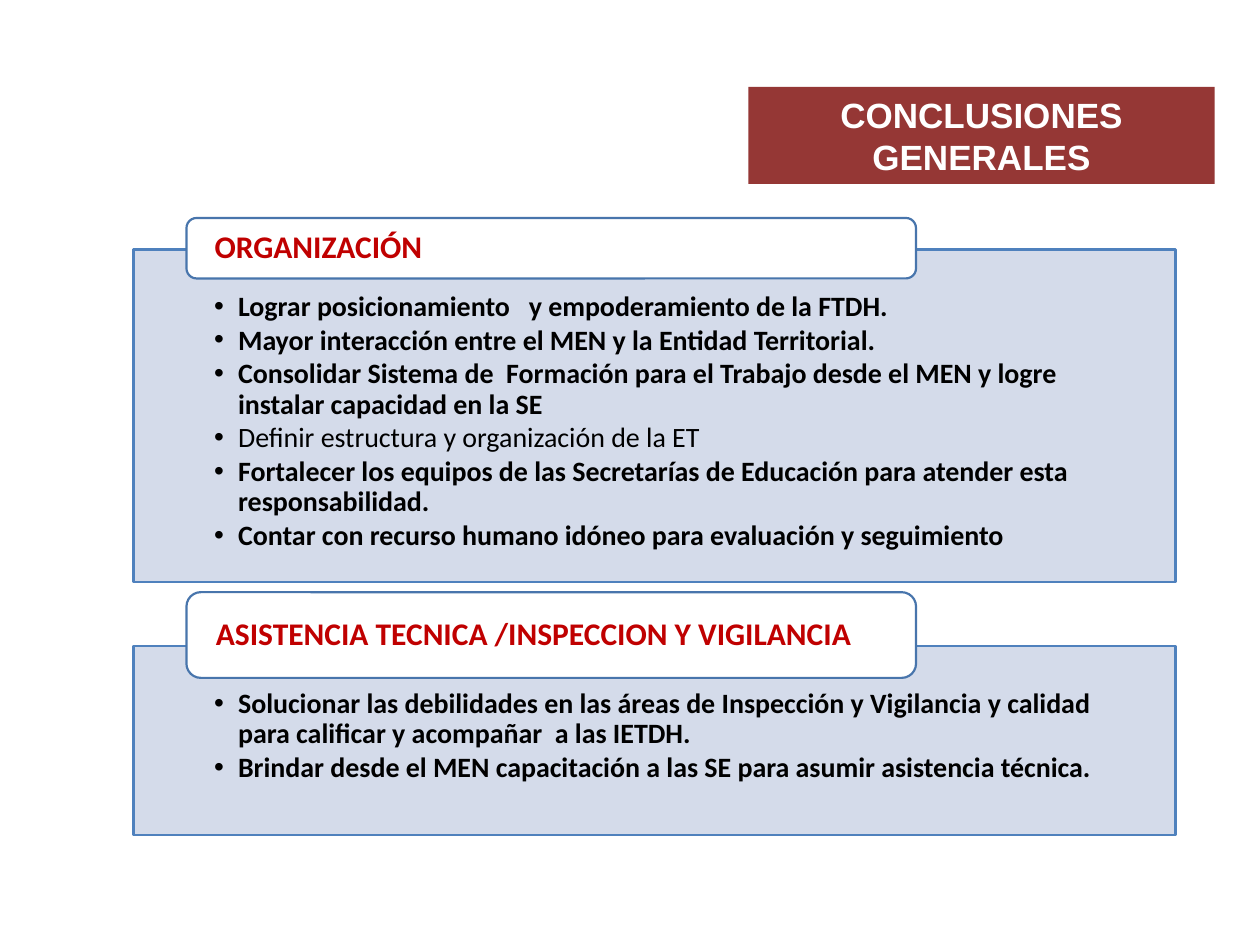
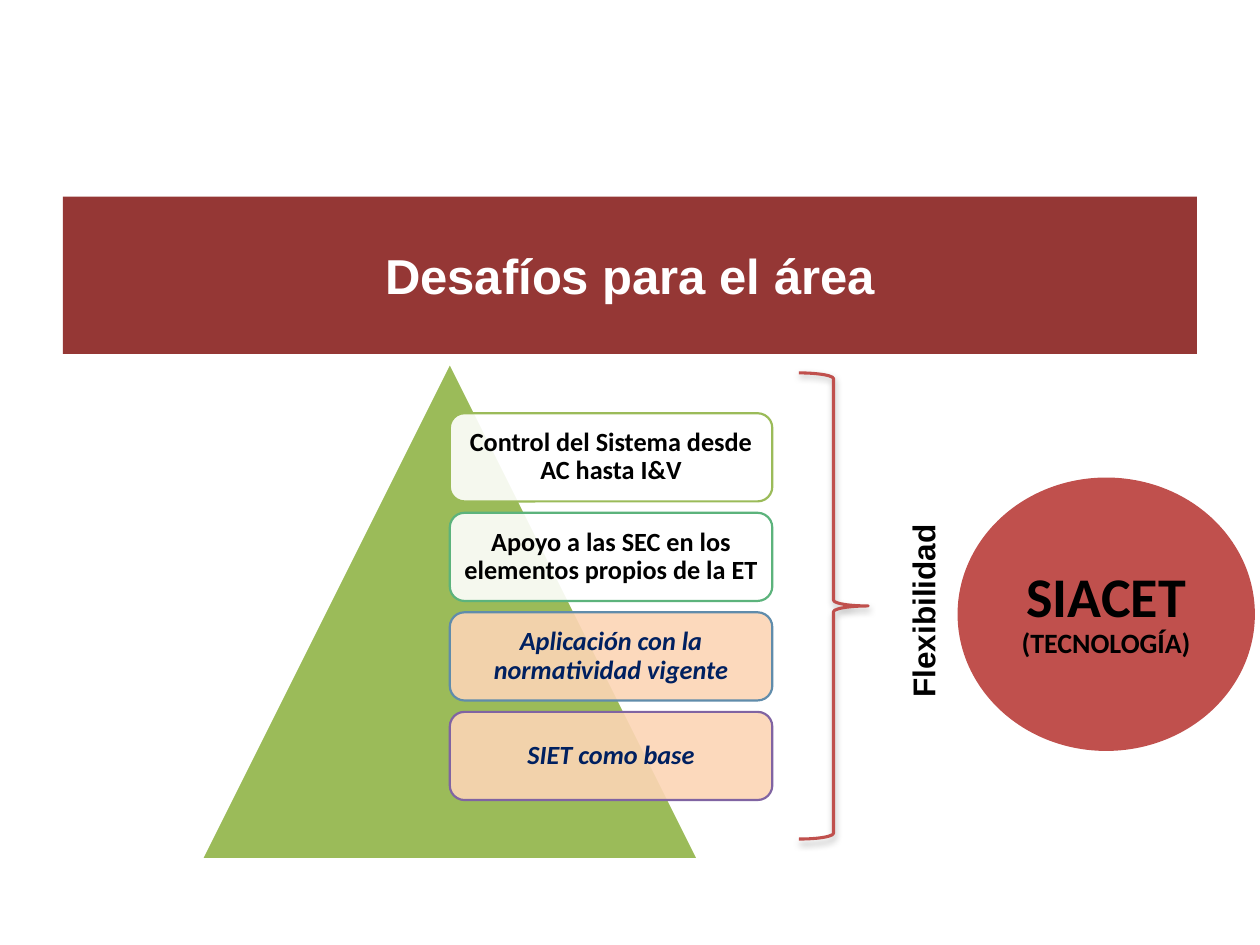
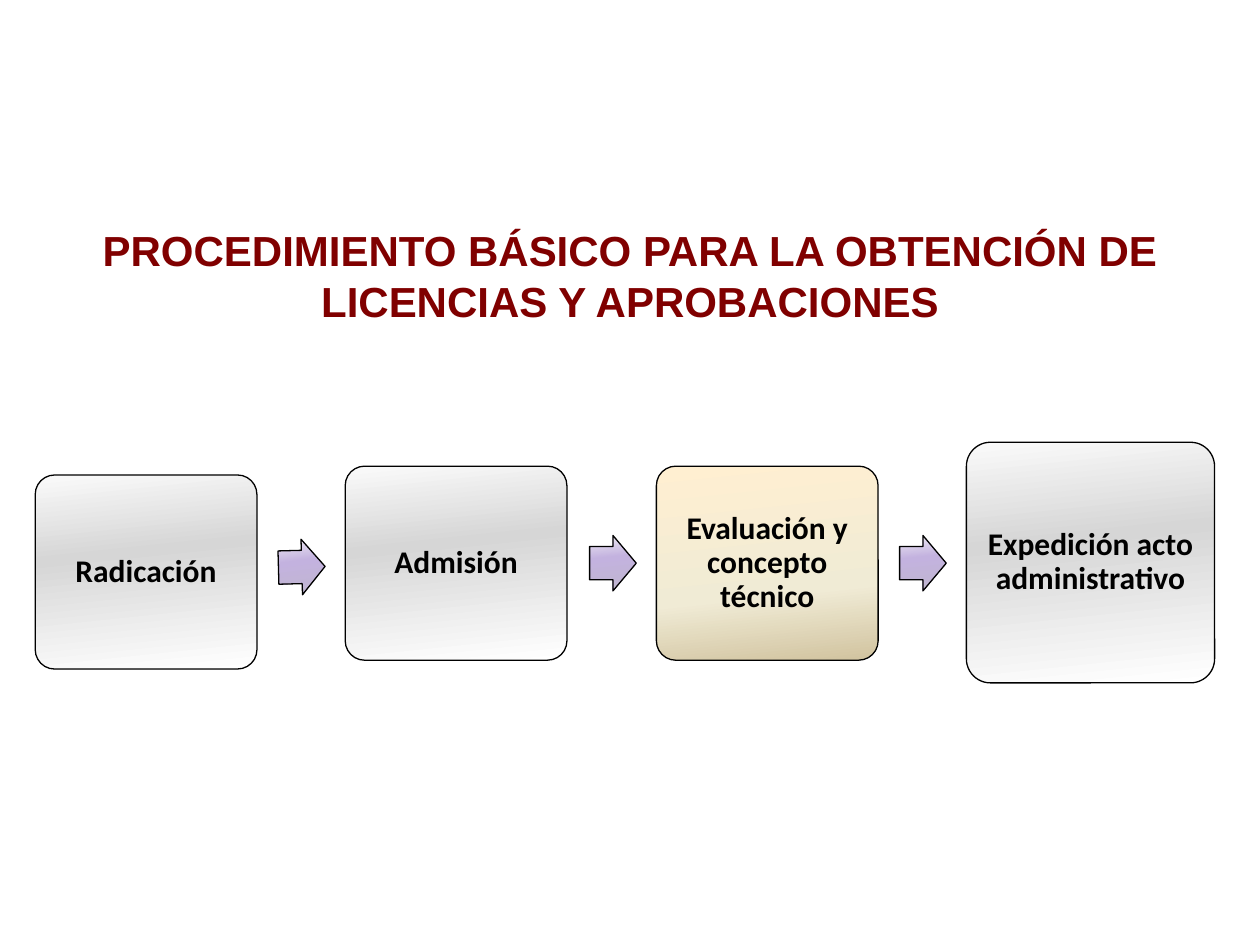
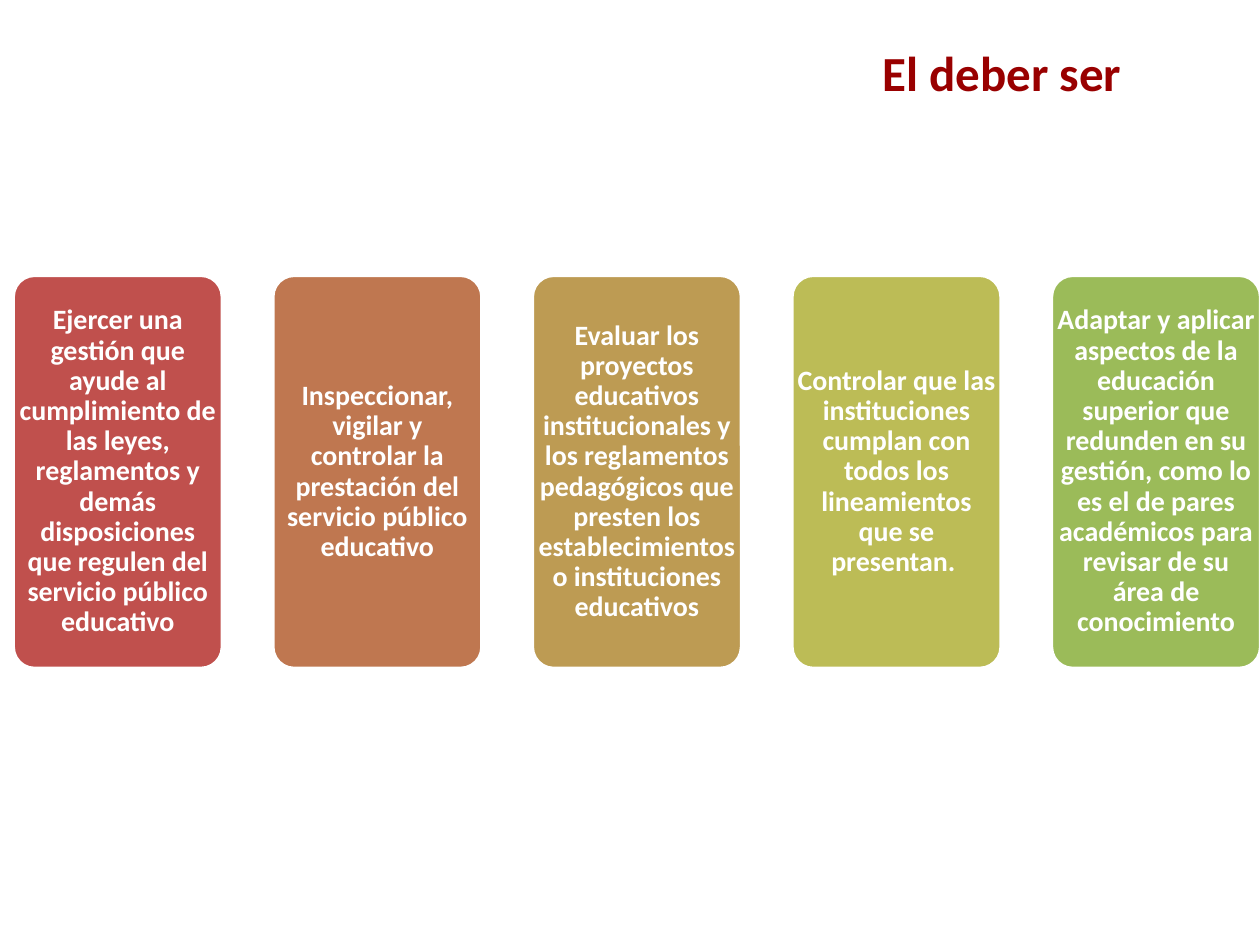
import copy

import lxml.etree
import pptx
import pptx.dml.color
import pptx.enum.shapes
import pptx.enum.text
import pptx.oxml.ns
import pptx.util

Inches = pptx.util.Inches
Pt = pptx.util.Pt
RGBColor = pptx.dml.color.RGBColor
Shape = pptx.enum.shapes.MSO_SHAPE
Align = pptx.enum.text.PP_ALIGN
Anchor = pptx.enum.text.MSO_ANCHOR
qn = pptx.oxml.ns.qn

BLACK = RGBColor(0x00, 0x00, 0x00)
WHITE = RGBColor(0xFF, 0xFF, 0xFF)
MAROON = RGBColor(0x95, 0x37, 0x35)
DARK_RED = RGBColor(0x80, 0x00, 0x00)
DEEP_RED = RGBColor(0x99, 0x00, 0x00)
HEADING_RED = RGBColor(0xC0, 0x00, 0x00)
RED = RGBColor(0xC0, 0x50, 0x4D)
BLUE = RGBColor(0x4F, 0x81, 0xBD)
TAB_BLUE = RGBColor(0x48, 0x75, 0xAC)
PALE_BLUE = RGBColor(0xD0, 0xD8, 0xE8)
NAVY = RGBColor(0x00, 0x20, 0x60)
GREEN = RGBColor(0x9B, 0xBB, 0x59)
SEA_GREEN = RGBColor(0x5C, 0xB3, 0x7C)
STEEL = RGBColor(0x60, 0x8C, 0xAB)
PURPLE = RGBColor(0x80, 0x64, 0xA2)
PEACH = RGBColor(0xFC, 0xD5, 0xB5)
COPPER = RGBColor(0xBF, 0x77, 0x50)
OCHRE = RGBColor(0xBD, 0x9B, 0x53)
OLIVE = RGBColor(0xBC, 0xBC, 0x56)
SILVER_STOPS = [(0, RGBColor(0xFA, 0xFA, 0xFA)), (0.4, RGBColor(0xD6, 0xD6, 0xD6)), (1, WHITE)]
CREAM_STOPS = [(0, RGBColor(0xFF, 0xEF, 0xD1)), (0.65, RGBColor(0xF0, 0xEB, 0xD5)),
               (1, RGBColor(0xD1, 0xC3, 0x9F))]
LILAC_STOPS = [(0, RGBColor(0xEF, 0xEB, 0xF4)), (0.4, RGBColor(0xC3, 0xB2, 0xDF)),
               (1, RGBColor(0xC0, 0xB6, 0xCF))]
TITLE_PLACE = (0.5, 1.56, 9, 1.25)


def add_shape(page, kind, place, fill=None, line=None, width=1.25, opacity=100):
    shape = page.shapes.add_shape(kind, *map(Inches, place))
    shape.shadow.inherit = False
    if fill is None:
        shape.fill.background()
    elif isinstance(fill, list):
        shape.fill.gradient()
        shape.fill.gradient_angle = 276
        stop_list = shape._element.spPr.find(".//" + qn("a:gsLst"))
        stop_list.append(copy.deepcopy(stop_list[-1]))
        for stop, (position, color) in zip(shape.fill.gradient_stops, fill):
            stop.position = position
            stop.color.rgb = color
    else:
        shape.fill.solid()
        shape.fill.fore_color.rgb = fill
    if opacity < 100:
        color_node = shape._element.spPr.find(".//" + qn("a:srgbClr"))
        lxml.etree.SubElement(color_node, qn("a:alpha"), val=str(opacity * 1000))
    if line is None:
        shape.line.fill.background()
    else:
        shape.line.color.rgb = line
        shape.line.width = Pt(width)
    return shape


def write(box, lines, size, color, font="Calibri", align=Align.CENTER, anchor=Anchor.MIDDLE,
          insets=(0.1, 0.05, 0.1, 0.05), spacing=0.9, bullets=False):
    frame = box.text_frame
    frame.word_wrap = True
    frame.vertical_anchor = anchor
    frame.margin_left, frame.margin_top, frame.margin_right, frame.margin_bottom = map(Inches, insets)
    for index, line in enumerate(lines):
        para = frame.paragraphs[0] if index == 0 else frame.add_paragraph()
        para.add_run().text = line
        para.alignment = align
        para.line_spacing = spacing
        if bullets:
            para.space_after = Pt(2)
            properties = para._p.get_or_add_pPr()
            properties.set("marL", str(Inches(0.19)))
            properties.set("indent", str(Inches(-0.19)))
            lxml.etree.SubElement(properties, qn("a:buFont"), typeface="Arial")
            lxml.etree.SubElement(properties, qn("a:buChar"), char="•")
        para.font.name = font
        para.font.size = Pt(size)
        para.font.bold = True
        para.font.color.rgb = color
    return frame.paragraphs


deck = pptx.Presentation()
deck.slide_width = Inches(10)
deck.slide_height = Inches(7.5)
blank = deck.slide_layouts[6]

page = deck.slides.add_slide(blank)
sections = [
    ("ORGANIZACIÓN", 1.73, 0.48, 1.98, 2.64, [
        "Lograr posicionamiento   y empoderamiento de la FTDH.",
        "Mayor interacción entre el MEN y la Entidad Territorial.",
        "Consolidar Sistema de  Formación para el Trabajo desde el MEN y logre instalar capacidad en la SE",
        "Definir estructura y organización de la ET",
        "Fortalecer los equipos de las Secretarías de Educación para atender esta responsabilidad.",
        "Contar con recurso humano idóneo para evaluación y seguimiento",
    ]),
    ("ASISTENCIA TECNICA /INSPECCION Y VIGILANCIA", 4.7, 0.68, 5.13, 1.5, [
        "Solucionar las debilidades en las áreas de Inspección y Vigilancia y calidad para calificar "
        "y acompañar  a las IETDH.",
        "Brindar desde el MEN capacitación a las SE para asumir asistencia técnica.",
    ]),
]
for heading, tab_top, tab_height, panel_top, panel_height, points in sections:
    panel = add_shape(page, Shape.RECTANGLE, (1.06, panel_top, 8.27, panel_height),
                      PALE_BLUE, BLUE, opacity=90)
    for para in write(panel, points, 16, BLACK, align=Align.LEFT, anchor=Anchor.TOP,
                      insets=(0.64, 0.34, 0.64, 0.12), bullets=True):
        para.font.bold = not para.text.startswith("Definir")
    tab = add_shape(page, Shape.ROUNDED_RECTANGLE, (1.48, tab_top, 5.79, tab_height), WHITE, TAB_BLUE)
    write(tab, [heading], 18, HEADING_RED, align=Align.LEFT, insets=(0.2, 0, 0.2, 0))
banner = add_shape(page, Shape.RECTANGLE, (5.94, 0.69, 3.7, 0.77), MAROON)
write(banner, ["CONCLUSIONES", "GENERALES"], 20, WHITE, "Arial", anchor=Anchor.TOP, spacing=1)

page = deck.slides.add_slide(blank)
add_shape(page, Shape.ISOSCELES_TRIANGLE, (1.6, 2.88, 3.94, 3.94), GREEN, WHITE)
challenges = [
    ("Control del Sistema desde AC hasta I&V", WHITE, GREEN, BLACK),
    ("Apoyo a las SEC en los elementos propios de la ET", WHITE, SEA_GREEN, BLACK),
    ("Aplicación con la normatividad vigente", PEACH, STEEL, NAVY),
    ("SIET como base", PEACH, PURPLE, NAVY),
]
for index, (text, fill, line, color) in enumerate(challenges):
    card = add_shape(page, Shape.ROUNDED_RECTANGLE, (3.57, 3.28 + 0.79 * index, 2.56, 0.7),
                     fill, line, opacity=90)
    para = write(card, [text], 15, color, insets=[0.03] * 4)[0]
    para.font.italic = color == NAVY
banner = add_shape(page, Shape.RECTANGLE, TITLE_PLACE, MAROON)
write(banner, ["Desafíos para el área"], 28, WHITE, "Arial", spacing=1)
brace = add_shape(page, Shape.RIGHT_BRACE, (6.34, 2.96, 0.55, 3.7), line=RED, width=1.75)
shadow = lxml.etree.SubElement(brace._element.spPr.find(qn("a:effectLst")), qn("a:outerShdw"),
                               blurRad=str(Pt(4)), dist=str(Pt(2)), dir="5400000", rotWithShape="0")
shadow_color = lxml.etree.SubElement(shadow, qn("a:srgbClr"), val="000000")
lxml.etree.SubElement(shadow_color, qn("a:alpha"), val="28000")
side_label = page.shapes.add_textbox(*map(Inches, (6.48, 4.59, 1.69, 0.4)))
side_label.rotation = 270
write(side_label, ["Flexibilidad"], 18, BLACK, "Arial", align=Align.LEFT, anchor=Anchor.TOP, spacing=1)
circle = add_shape(page, Shape.OVAL, (7.6, 3.79, 2.36, 2.17), RED)
para = write(circle, ["SIACET "], 32, BLACK, insets=[0.06] * 4)[0]
span = para.add_run()
span.text = "(TECNOLOGÍA)"
span.font.size = Pt(16)

page = deck.slides.add_slide(blank)
title = page.shapes.add_textbox(*map(Inches, TITLE_PLACE))
write(title, ["PROCEDIMIENTO BÁSICO PARA LA OBTENCIÓN DE LICENCIAS Y APROBACIONES"], 24, DARK_RED,
      "Arial", spacing=1)
steps = [
    ("Radicación", (0.28, 3.77, 1.76, 1.54), SILVER_STOPS),
    ("Admisión", (2.74, 3.7, 1.76, 1.54), SILVER_STOPS),
    ("Evaluación y concepto técnico", (5.21, 3.7, 1.76, 1.54), CREAM_STOPS),
    ("Expedición acto administrativo", (7.67, 3.51, 1.97, 1.91), SILVER_STOPS),
]
for text, place, stops in steps:
    step = add_shape(page, Shape.ROUNDED_RECTANGLE, place, stops, BLACK, 0.75)
    step.adjustments[0] = 0.1
    write(step, [text], 18, BLACK, insets=[0.03] * 4)
for left, top, turn in [(2.21, 4.28, 358.5), (4.68, 4.25, 0), (7.14, 4.25, 0)]:
    arrow = add_shape(page, Shape.RIGHT_ARROW, (left, top, 0.37, 0.44), LILAC_STOPS, BLACK, 0.75)
    arrow.adjustments[0] = 0.6
    arrow.rotation = turn

page = deck.slides.add_slide(blank)
duties = [
    ("Ejercer una gestión que ayude al cumplimiento de las leyes, reglamentos y demás disposiciones "
     "que regulen del servicio público educativo", RED),
    ("Inspeccionar, vigilar y controlar la prestación del servicio público educativo", COPPER),
    ("Evaluar los proyectos educativos institucionales y los reglamentos pedagógicos que presten los "
     "establecimientos o instituciones educativos", OCHRE),
    ("Controlar que las instituciones cumplan con todos los lineamientos que se presentan. ", OLIVE),
    ("Adaptar y aplicar aspectos de la educación superior que redunden en su gestión, como lo es el de "
     "pares académicos para revisar de su área de conocimiento", GREEN),
]
for index, (text, fill) in enumerate(duties):
    place = (0.11 + 2.06 * index, 2.19, 1.65, 3.11)
    column = add_shape(page, Shape.ROUNDED_RECTANGLE, place, fill, WHITE)
    column.adjustments[0] = 0.1
    label = page.shapes.add_textbox(*map(Inches, place))
    write(label, [text], 16, WHITE, insets=(0.03, 0.02, 0.03, 0.02))
title = page.shapes.add_textbox(*map(Inches, (6.18, 0.29, 3.54, 0.71)))
write(title, ["El deber ser"], 28, DEEP_RED, anchor=Anchor.TOP, spacing=1)

deck.save("out.pptx")
